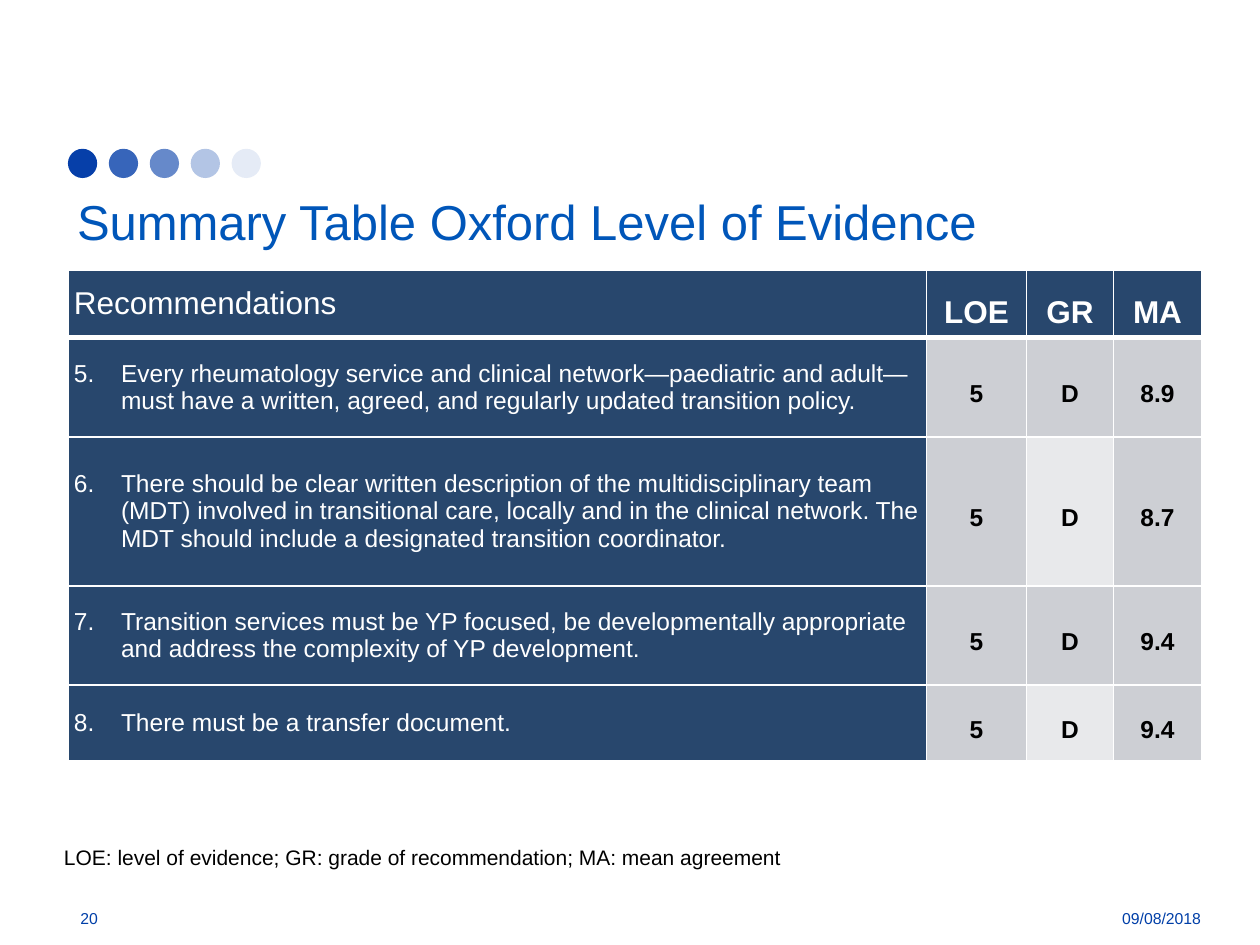
from lxml import etree
from pptx import Presentation
from pptx.dml.color import RGBColor
from pptx.enum.shapes import MSO_SHAPE
from pptx.enum.text import MSO_ANCHOR, PP_ALIGN
from pptx.oxml.ns import qn
from pptx.util import Cm, Pt

OVAL = MSO_SHAPE.OVAL
MIDDLE = MSO_ANCHOR.MIDDLE
LEFT, CENTER, RIGHT = PP_ALIGN.LEFT, PP_ALIGN.CENTER, PP_ALIGN.RIGHT

FONT = "Arial"
WHITE, BLACK, NAVY = "FFFFFF", "000000", "28476D"
GREY, LIGHT_GREY = "CDCFD4", "E8E9EB"
DOT_BLUE, TITLE_BLUE, FOOTER_BLUE = "063FA9", "0056B9", "003FA8"

DOT_OPACITIES = [100, 80, 61, 30, 10]
COLUMN_WIDTHS = [17.31, 2.01, 1.76, 1.77]
ROW_HEIGHTS = [1.37, 2, 3, 2, 1.52]
FIRST_NUMBER = 5
HEADERS = ["Recommendations", "LOE", "GR", "MA"]
RECOMMENDATIONS = [
    ("Every rheumatology service and clinical network—paediatric and adult—must have "
     "a written, agreed, and regularly updated transition policy.", "5", "D", "8.9"),
    ("There should be clear written description of the multidisciplinary team (MDT) "
     "involved in transitional care, locally and in the clinical network. The MDT should "
     "include a designated transition coordinator.", "5", "D", "8.7"),
    ("Transition services must be YP focused, be developmentally appropriate and address "
     "the complexity of YP development.", "5", "D", "9.4"),
    ("There must be a transfer document.", "5", "D", "9.4"),
]


def rgb(color):
    """Return the colour for a hex string."""
    return RGBColor.from_string(color)


def write(text_frame, text, size, color, align=LEFT, bold=False):
    """Put one formatted paragraph in a text frame and return it."""
    text_frame.text = text
    paragraph = text_frame.paragraphs[0]
    paragraph.alignment = align
    font = paragraph.runs[0].font
    font.name, font.size, font.bold = FONT, Pt(size), bold
    font.color.rgb = rgb(color)
    return paragraph


def add_dots(slide):
    """Draw the row of fading dots above the title."""
    for index, opacity in enumerate(DOT_OPACITIES):
        dot = slide.shapes.add_shape(OVAL, Cm(1.37 + 0.825 * index), Cm(3), Cm(0.59), Cm(0.59))
        dot.shadow.inherit = False
        dot.line.fill.background()
        dot.fill.solid()
        dot.fill.fore_color.rgb = rgb(DOT_BLUE)
        color = dot.fill._xPr.find(".//" + qn("a:srgbClr"))
        etree.SubElement(color, qn("a:alpha"), val=str(opacity * 1000))


def set_title(slide, text):
    """Place and format the title placeholder."""
    title = slide.shapes.title
    title.left, title.top, title.width, title.height = Cm(1.3), Cm(3.58), Cm(23.14), Cm(1.75)
    title.text_frame.vertical_anchor = MIDDLE
    write(title.text_frame, text, 28, TITLE_BLUE)


def add_label(slide, text, box, size, color, align=LEFT, wrap=True):
    """Add a one-line text box."""
    label = slide.shapes.add_textbox(*(Cm(length) for length in box))
    label.text_frame.word_wrap = wrap
    label.text_frame.vertical_anchor = MIDDLE
    write(label.text_frame, text, size, color, align)


def set_borders(cell, top, bottom):
    """Give a cell white borders, with the top and bottom widths in points."""
    properties = cell._tc.get_or_add_tcPr()
    widths = {"lnL": 1, "lnR": 1, "lnT": top, "lnB": bottom}
    for index, (side, width) in enumerate(widths.items()):
        line = etree.Element(qn("a:" + side), w=str(Pt(width)))
        fill = etree.SubElement(line, qn("a:solidFill"))
        etree.SubElement(fill, qn("a:srgbClr"), val=WHITE)
        properties.insert(index, line)


def number_paragraph(paragraph, start):
    """Turn a paragraph into a numbered item with a hanging indent."""
    properties = paragraph._p.get_or_add_pPr()
    properties.set("marL", str(Cm(0.95)))
    properties.set("indent", str(-Cm(0.95)))
    etree.SubElement(properties, qn("a:buAutoNum"), type="arabicPeriod", startAt=str(start))


def fill_cell(cell, text, row, column):
    """Write and format one table cell according to its place."""
    is_header, is_value = row == 0, column > 0
    cell.margin_left = cell.margin_right = Cm(0.12)
    cell.margin_top = cell.margin_bottom = 0
    cell.vertical_anchor = MIDDLE
    cell.fill.solid()
    if is_header or not is_value:
        background, color = NAVY, WHITE
    else:
        background, color = LIGHT_GREY if column == 2 and row % 2 == 0 else GREY, BLACK
    cell.fill.fore_color.rgb = rgb(background)
    set_borders(cell, 3 if row == 1 else 1, 3 if is_header else 1)
    paragraph = write(cell.text_frame, text, 18 if is_header else 14, color,
                      CENTER if is_value else LEFT, is_value)
    if is_value:
        paragraph.line_spacing = 1.5
    elif not is_header:
        number_paragraph(paragraph, FIRST_NUMBER + row - 1)


def add_evidence_table(slide):
    """Add the table of recommendations and their evidence."""
    frame = slide.shapes.add_table(len(ROW_HEIGHTS), len(COLUMN_WIDTHS), Cm(1.37), Cm(5.44),
                                   Cm(sum(COLUMN_WIDTHS)), Cm(sum(ROW_HEIGHTS)))
    table = frame.table
    table.first_row = table.horz_banding = False
    for column, width in zip(table.columns, COLUMN_WIDTHS):
        column.width = Cm(width)
    for row, height in zip(table.rows, ROW_HEIGHTS):
        row.height = Cm(height)
    for row, texts in enumerate([HEADERS, *RECOMMENDATIONS]):
        for column, text in enumerate(texts):
            fill_cell(table.cell(row, column), text, row, column)


def main():
    """Build the slide and save the presentation."""
    presentation = Presentation()
    presentation.slide_width, presentation.slide_height = Cm(25.4), Cm(19.05)
    slide = presentation.slides.add_slide(presentation.slide_layouts[5])
    add_dots(slide)
    set_title(slide, "Summary Table Oxford Level of Evidence")
    add_evidence_table(slide)
    add_label(slide, "LOE: level of evidence; GR: grade of recommendation; MA: mean agreement",
              (1.04, 16.89, 15.09, 0.76), 12, BLACK, wrap=False)
    add_label(slide, "20", (1.37, 18, 2.44, 1.02), 9, FOOTER_BLUE)
    add_label(slide, "09/08/2018", (21.06, 18, 3.4, 1.02), 9, FOOTER_BLUE, RIGHT)
    presentation.save("out.pptx")


if __name__ == "__main__":
    main()
